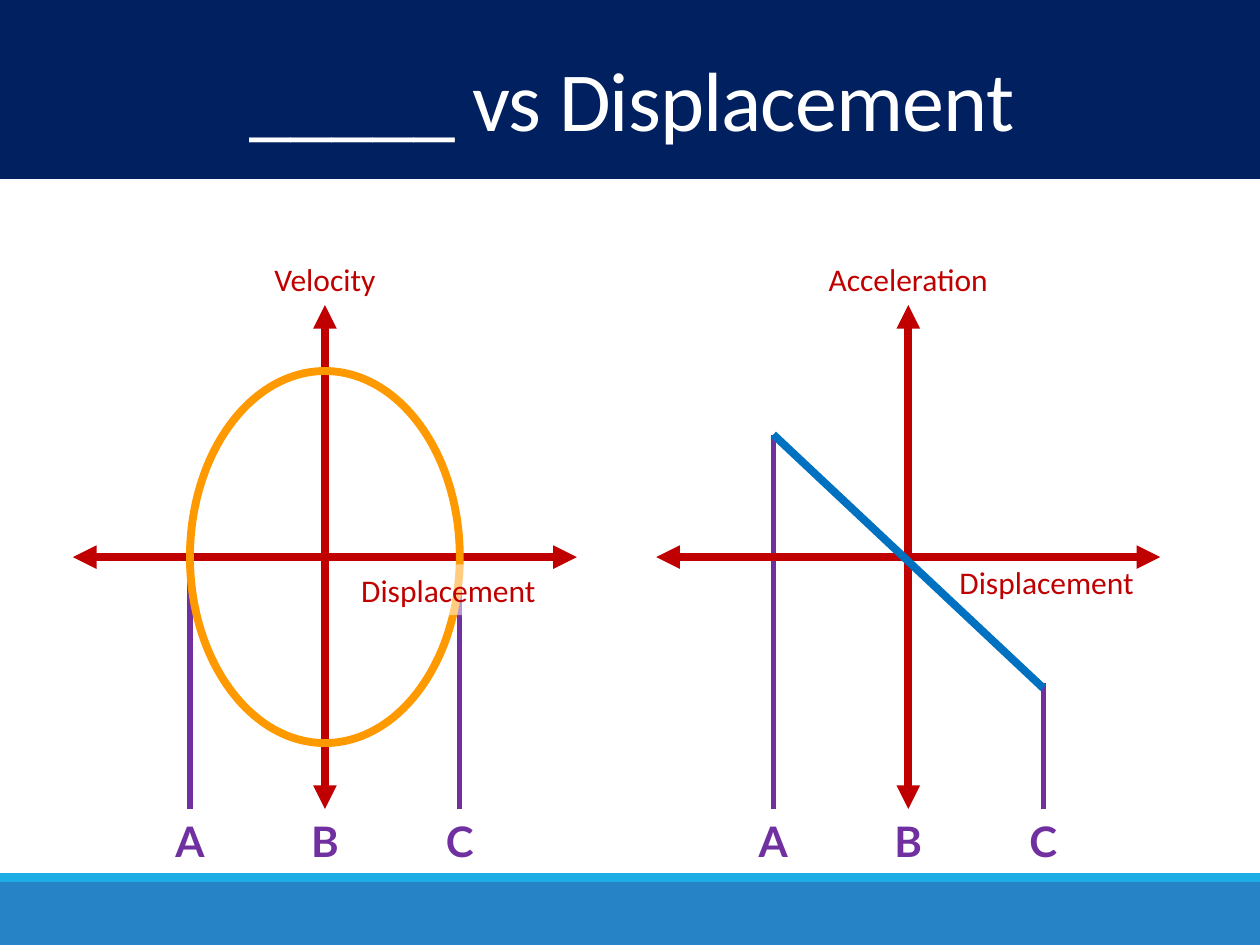
"""Build a slide with velocity and acceleration graphs against displacement."""
import pptx
import pptx.dml.color
import pptx.enum.shapes
import pptx.enum.text
import pptx.oxml.ns
import pptx.util
from lxml import etree

Cm = pptx.util.Cm
COLOURS = {
    "navy": "002060", "white": "FFFFFF", "blue": "2683C6", "cyan": "1CADE4",
    "axis": "C00000", "mark": "7030A0", "ellipse": "FF9900", "slope": "0070C0",
}
TITLE = {"name": "Calibri", "size": pptx.util.Pt(48), "bold": False}
LABEL = {"name": "Calibri", "size": pptx.util.Pt(18), "bold": False}
LETTER = {"name": "Lato", "size": pptx.util.Pt(24), "bold": True}
ORIGIN_Y = 11.23
AXIS_REACH = 5.08
AXIS_BOTTOM = ORIGIN_Y + AXIS_REACH
AMPLITUDE = 2.72
LEFT_GRAPH, RIGHT_GRAPH = 6.55, 18.31
SLOPE_TOP, SLOPE_BOTTOM = 8.76, 13.87


def colour(name):
    return pptx.dml.color.RGBColor.from_string(COLOURS[name])


def add_child(parent, tag, **attributes):
    return etree.SubElement(parent, pptx.oxml.ns.qn(tag), **attributes)


def set_attributes(target, values):
    for name, value in values.items():
        setattr(target, name, value)


def write_text(shape, text, font_values, colour_name):
    set_attributes(shape.text_frame, {
        "auto_size": pptx.enum.text.MSO_AUTO_SIZE.NONE,
        "vertical_anchor": pptx.enum.text.MSO_ANCHOR.MIDDLE,
    })
    paragraph = shape.text_frame.paragraphs[0]
    paragraph.alignment = pptx.enum.text.PP_ALIGN.CENTER
    run = paragraph.add_run()
    run.text = text
    set_attributes(run.font, font_values)
    run.font.color.rgb = colour(colour_name)
    return paragraph


def add_band(slide, top, height, colour_name):
    band = slide.shapes.add_shape(
        pptx.enum.shapes.MSO_SHAPE.RECTANGLE, 0, Cm(top), Cm(25.4), Cm(height))
    band.shadow.inherit = False
    band.fill.solid()
    band.fill.fore_color.rgb = colour(colour_name)
    band.line.fill.background()


def add_title(slide, text):
    title = slide.shapes.title
    set_attributes(title, {
        "left": Cm(0.08), "top": Cm(1.07), "width": Cm(25.32), "height": Cm(2.13)})
    paragraph = write_text(title, text, TITLE, "white")
    paragraph.line_spacing = 0.85
    paragraph.runs[0].font._element.set("spc", "-50")
    title._element.getparent().append(title._element)


def add_label(slide, text, center, top, width, height, font_values, colour_name):
    label = slide.shapes.add_textbox(
        Cm(center - width / 2), Cm(top), Cm(width), Cm(height))
    label.text_frame.word_wrap = False
    write_text(label, text, font_values, colour_name)
    return label


def add_displacement(slide, center, top):
    label = add_label(slide, "Displacement", center, top, 4.06, 1.02, LABEL, "axis")
    label.fill.solid()
    label.fill.fore_color.rgb = colour("white")
    fill_colour = label._element.spPr.find(".//" + pptx.oxml.ns.qn("a:srgbClr"))
    add_child(fill_colour, "a:alpha", val="50000")


def add_line(slide, start, end, colour_name, width, arrows=False):
    line = slide.shapes.add_connector(
        pptx.enum.shapes.MSO_CONNECTOR.STRAIGHT, *map(Cm, start + end))
    line.line.color.rgb = colour(colour_name)
    line.line.width = pptx.util.Pt(width)
    if arrows:
        for tag in ("a:headEnd", "a:tailEnd"):
            add_child(line.line._get_or_add_ln(), tag, type="triangle")
    add_child(line._element.spPr, "a:effectLst")


def add_marks(slide, center, top_a, top_c):
    for letter, offset, top in (("A", -AMPLITUDE, top_a), ("B", 0, None),
                                ("C", AMPLITUDE, top_c)):
        x = center + offset
        if top is not None:
            add_line(slide, (x, top), (x, AXIS_BOTTOM), "mark", 3)
        add_label(slide, letter, x, AXIS_BOTTOM, 1.1, 1.27, LETTER, "mark")


def add_axes(slide, center, name):
    add_line(slide, (center, ORIGIN_Y - AXIS_REACH), (center, AXIS_BOTTOM),
             "axis", 4.5, arrows=True)
    add_line(slide, (center + AXIS_REACH, ORIGIN_Y), (center - AXIS_REACH, ORIGIN_Y),
             "axis", 4.5, arrows=True)
    add_label(slide, name, center, 5.11, 3.76, 1.02, LABEL, "axis")


def add_ellipse(slide, center, half_height):
    ellipse = slide.shapes.add_shape(
        pptx.enum.shapes.MSO_SHAPE.OVAL, Cm(center - AMPLITUDE),
        Cm(ORIGIN_Y - half_height), Cm(2 * AMPLITUDE), Cm(2 * half_height))
    ellipse.shadow.inherit = False
    ellipse.fill.background()
    ellipse.line.color.rgb = colour("ellipse")
    ellipse.line.width = pptx.util.Pt(4.5)


def add_velocity_graph(slide, center):
    add_marks(slide, center, ORIGIN_Y, ORIGIN_Y)
    add_axes(slide, center, "Velocity")
    add_ellipse(slide, center, 3.75)
    add_displacement(slide, center + 2.49, 11.38)


def add_acceleration_graph(slide, center):
    add_marks(slide, center, SLOPE_TOP, SLOPE_BOTTOM - 0.1)
    add_displacement(slide, center + 2.79, ORIGIN_Y)
    add_axes(slide, center, "Acceleration")
    add_line(slide, (center - AMPLITUDE, SLOPE_TOP),
             (center + AMPLITUDE, SLOPE_BOTTOM), "slope", 4.5)


def main():
    presentation = pptx.Presentation()
    set_attributes(presentation, {"slide_width": Cm(25.4), "slide_height": Cm(19.05)})
    slide = presentation.slides.add_slide(presentation.slide_layouts[5])
    for band in ((17.78, 1.27, "blue"), (17.6, 0.18, "cyan"), (0, 3.61, "navy")):
        add_band(slide, *band)
    add_title(slide, "_____ vs Displacement")
    add_velocity_graph(slide, LEFT_GRAPH)
    add_acceleration_graph(slide, RIGHT_GRAPH)
    presentation.save("out.pptx")


if __name__ == "__main__":
    main()
